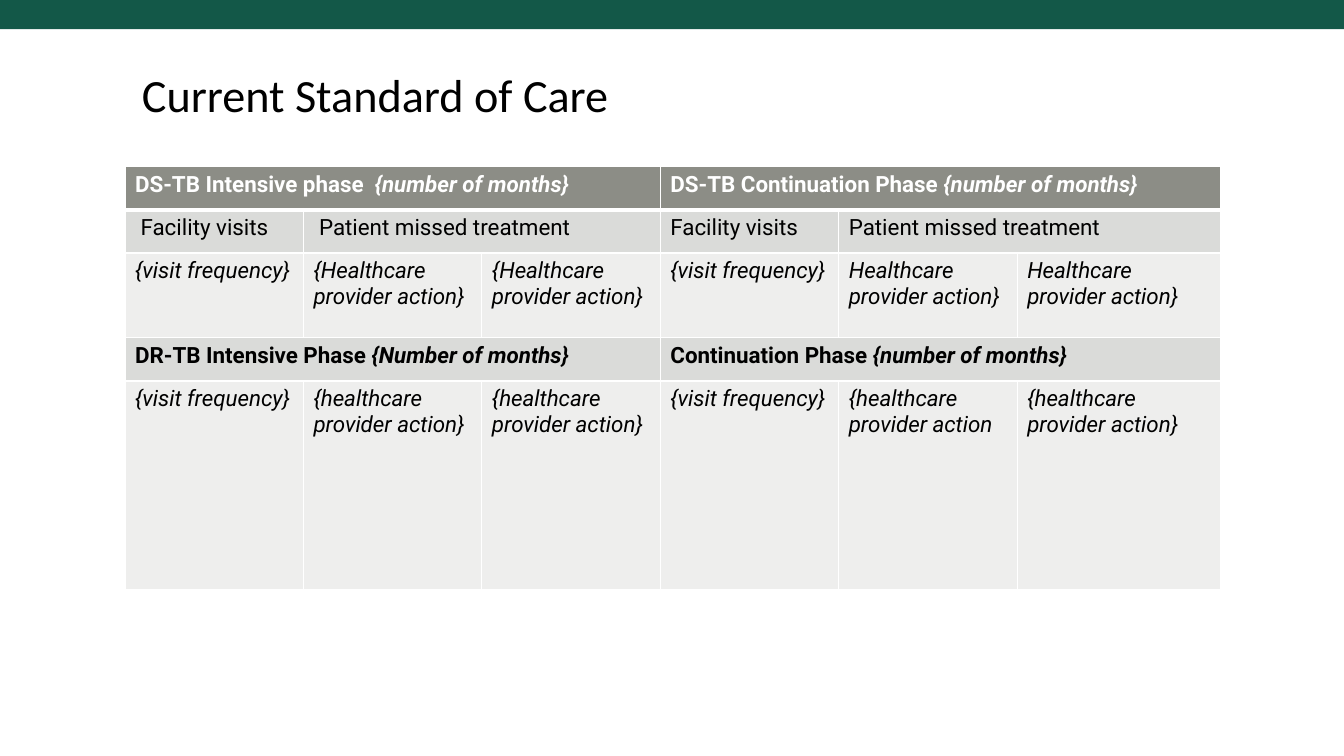
from lxml.etree import SubElement
from pptx import Presentation
from pptx.dml.color import RGBColor
from pptx.enum.shapes import MSO_SHAPE
from pptx.enum.text import MSO_ANCHOR
from pptx.oxml.ns import qn
from pptx.util import Inches, Pt

RECT = MSO_SHAPE.RECTANGLE
MIDDLE = MSO_ANCHOR.MIDDLE
GREEN, WHITE, BLACK = "135848", "FFFFFF", "000000"
DARK, MID, PALE = "8C8D86", "DADBD9", "EEEEED"


def color(code):
    return RGBColor.from_string(code)


def write(para, text, font="Roboto", size=16, ink=BLACK, bold=False, italic=False):
    run = para.add_run()
    run.text = text
    run.font.name = font
    run.font.size = Pt(size)
    run.font.color.rgb = color(ink)
    run.font.bold = bold
    run.font.italic = italic


class Deck:
    """Holds the style and the current slide, and adds elements to it."""

    def __init__(self):
        self.file = Presentation()
        self.file.slide_width = Inches(13.33)
        self.file.slide_height = Inches(7.5)
        self.slide = self.file.slides.add_slide(self.file.slide_layouts[6])

    def band(self, box, fill):
        shape = self.slide.shapes.add_shape(RECT, *map(Inches, box))
        shape.shadow.inherit = False
        shape.fill.solid()
        shape.fill.fore_color.rgb = color(fill)
        shape.line.fill.background()

    def title(self, box, text):
        frame = self.slide.shapes.add_textbox(*map(Inches, box)).text_frame
        frame.word_wrap = True
        frame.vertical_anchor = MIDDLE
        para = frame.paragraphs[0]
        para.line_spacing = 0.89
        write(para, text, font="Calibri", size=33)

    def edge(self, cell, side, width):
        props = cell._tc.get_or_add_tcPr()
        line = SubElement(props, qn(f"a:ln{side}"), w=str(Pt(width)))
        fill = SubElement(line, qn("a:solidFill"))
        SubElement(fill, qn("a:srgbClr"), val=WHITE)

    def grid(self, box, widths, rows):
        shape = self.slide.shapes.add_table(len(rows), len(widths), *map(Inches, box))
        table = shape.table
        table.horz_banding = False
        for col, width in zip(table.columns, widths):
            col.width = Inches(width)
        for r, (height, fill, spans, kind, texts) in enumerate(rows):
            table.rows[r].height = Inches(height)
            for c in range(len(widths)):
                cell = table.cell(r, c)
                for side in "LRTB":
                    thick = (r, side) in ((0, "B"), (1, "T"))
                    self.edge(cell, side, 3 if thick else 1)
                cell.fill.solid()
                cell.fill.fore_color.rgb = color(fill)
            c = 0
            for span, text in zip(spans, texts):
                cell = table.cell(r, c)
                if span > 1:
                    cell.merge(table.cell(r, c + span - 1))
                self.fill_cell(cell, text, kind, WHITE if fill == DARK else BLACK)
                c += span

    def fill_cell(self, cell, text, kind, ink):
        para = cell.text_frame.paragraphs[0]
        if kind == "phase":
            name, brace, rest = text.partition("{")
            write(para, name, ink=ink, bold=True)
            write(para, brace + rest, ink=ink, bold=True, italic=True)
        else:
            write(para, text, ink=ink, italic=kind == "entry")


def main():
    deck = Deck()
    deck.band((0, 0, 13.33, 0.29), GREEN)
    deck.title((1.31, 0.64, 10.5, 0.66), "Current Standard of Care")
    halves, heads, cells = (3, 3), (1, 2, 1, 2), (1,) * 6
    visit = "{visit frequency}"
    rows = [
        (0.43, DARK, halves, "phase",
         ["DS-TB Intensive phase  {number of months}",
          "DS-TB Continuation Phase {number of months}"]),
        (0.43, MID, heads, "head",
         [" Facility visits", " Patient missed treatment",
          "Facility visits", "Patient missed treatment"]),
        (0.84, PALE, cells, "entry",
         [visit, "{Healthcare provider action}", "{Healthcare provider action}",
          visit, "Healthcare provider action}", "Healthcare provider action}"]),
        (0.43, MID, halves, "phase",
         ["DR-TB Intensive Phase {Number of months}",
          "Continuation Phase {number of months}"]),
        (2.07, PALE, cells, "entry",
         [visit, "{healthcare provider action}", "{healthcare provider action}",
          visit, "{healthcare provider action", "{healthcare provider action}"]),
    ]
    deck.grid((1.24, 1.65, 10.87, 4.2), [1.77] * 5 + [2.02], rows)
    deck.file.save("out.pptx")


if __name__ == "__main__":
    main()
